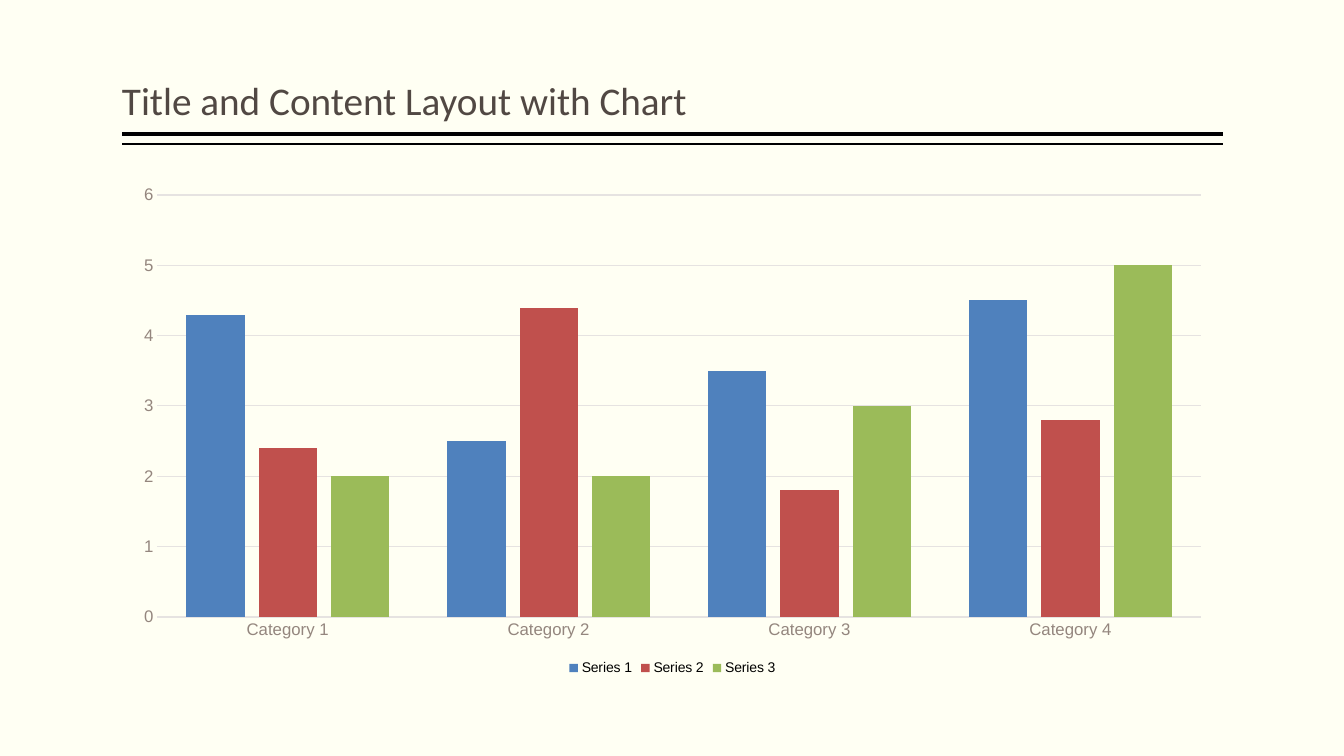
from lxml import etree
from pptx import Presentation
from pptx.chart.data import CategoryChartData
from pptx.dml.color import RGBColor
from pptx.enum.chart import XL_CHART_TYPE, XL_LEGEND_POSITION, XL_TICK_MARK
from pptx.enum.shapes import MSO_CONNECTOR
from pptx.enum.text import MSO_ANCHOR
from pptx.oxml.ns import qn
from pptx.util import Pt

CLUSTERED = XL_CHART_TYPE.COLUMN_CLUSTERED
LEGEND_BOTTOM = XL_LEGEND_POSITION.BOTTOM
NO_TICK = XL_TICK_MARK.NONE
STRAIGHT = MSO_CONNECTOR.STRAIGHT
ANCHOR_BOTTOM = MSO_ANCHOR.BOTTOM

EMU_PER_PX = 914400 / 100.8
COLORS = {
    "background": "FFFFF3",
    "title": "514843",
    "rule": "000000",
    "legend": "000000",
    "axis_text": "94867E",
    "grid": "E6E3E1",
    "Series 1": "4F81BD",
    "Series 2": "C0504D",
    "Series 3": "9BBB59",
}
CATEGORIES = ["Category 1", "Category 2", "Category 3", "Category 4"]
SERIES = {
    "Series 1": (4.3, 2.5, 3.5, 4.5),
    "Series 2": (2.4, 4.4, 1.8, 2.8),
    "Series 3": (2, 2, 3, 5),
}


def px(length):
    return round(length * EMU_PER_PX)


def color(name):
    return RGBColor.from_string(COLORS[name])


class SlideBuilder:
    title_font = "Calibri"
    chart_font = "Arial"

    def __init__(self, page):
        self.page = page
        fill = page.background.fill
        fill.solid()
        fill.fore_color.rgb = color("background")

    def style_font(self, font, name, size, color_name):
        font.name = name
        font.size = Pt(size)
        font.color.rgb = color(color_name)

    def style_line(self, line, color_name, weight):
        line.color.rgb = color(color_name)
        line.width = Pt(weight)

    def rule(self, left, right, y, weight):
        line = self.page.shapes.add_connector(
            STRAIGHT, px(right), px(y), px(left), px(y))
        self.style_line(line.line, "rule", weight)
        etree.SubElement(line._element.spPr, qn("a:effectLst"))

    def title(self, text, left, top, width, height):
        box = self.page.shapes.add_textbox(
            px(left), px(top), px(width), px(height))
        frame = box.text_frame
        frame.word_wrap = True
        frame.vertical_anchor = ANCHOR_BOTTOM
        frame.margin_left = frame.margin_right = 0
        frame.margin_top = frame.margin_bottom = px(5)
        para = frame.paragraphs[0]
        para.text = text
        para.line_spacing = 0.9
        self.style_font(para.font, self.title_font, 28, "title")

    def column_chart(self, left, top, width, height):
        data = CategoryChartData()
        data.categories = CATEGORIES
        for name, values in SERIES.items():
            data.add_series(name, values)
        chart = self.page.shapes.add_chart(
            CLUSTERED, px(left), px(top), px(width), px(height), data).chart
        chart.has_title = False
        self.style_font(chart.font, self.chart_font, 10, "legend")

        # Legend
        chart.has_legend = True
        chart.legend.position = LEGEND_BOTTOM
        chart.legend.include_in_layout = False

        # Columns
        plot = chart.plots[0]
        plot.vary_by_categories = False
        plot.gap_width = 100
        plot.overlap = -24
        for series in plot.series:
            series.format.fill.solid()
            series.format.fill.fore_color.rgb = color(series.name)

        # Axes
        for axis in (chart.category_axis, chart.value_axis):
            axis.major_tick_mark = axis.minor_tick_mark = NO_TICK
            self.style_font(
                axis.tick_labels.font, self.chart_font, 12, "axis_text")
        self.style_line(chart.category_axis.format.line, "grid", 1)
        value_axis = chart.value_axis
        value_axis.minimum_scale = 0
        value_axis.maximum_scale = 6
        value_axis.major_unit = 1
        value_axis.format.line.fill.background()
        value_axis.has_major_gridlines = True
        self.style_line(value_axis.major_gridlines.format.line, "grid", 0.75)


def main():
    deck = Presentation()
    deck.slide_width = px(1344)
    deck.slide_height = px(756)
    blank = deck.slide_layouts[6]
    builder = SlideBuilder(deck.slides.add_slide(blank))

    # Double rule under the title
    for y, weight in ((134, 3), (144, 1)):
        builder.rule(122, 1223, y, weight)

    # Title and chart
    builder.title("Title and Content Layout with Chart", 122, 8, 1100, 121)
    builder.column_chart(122, 176, 1101, 504)

    deck.save("out.pptx")


if __name__ == "__main__":
    main()
